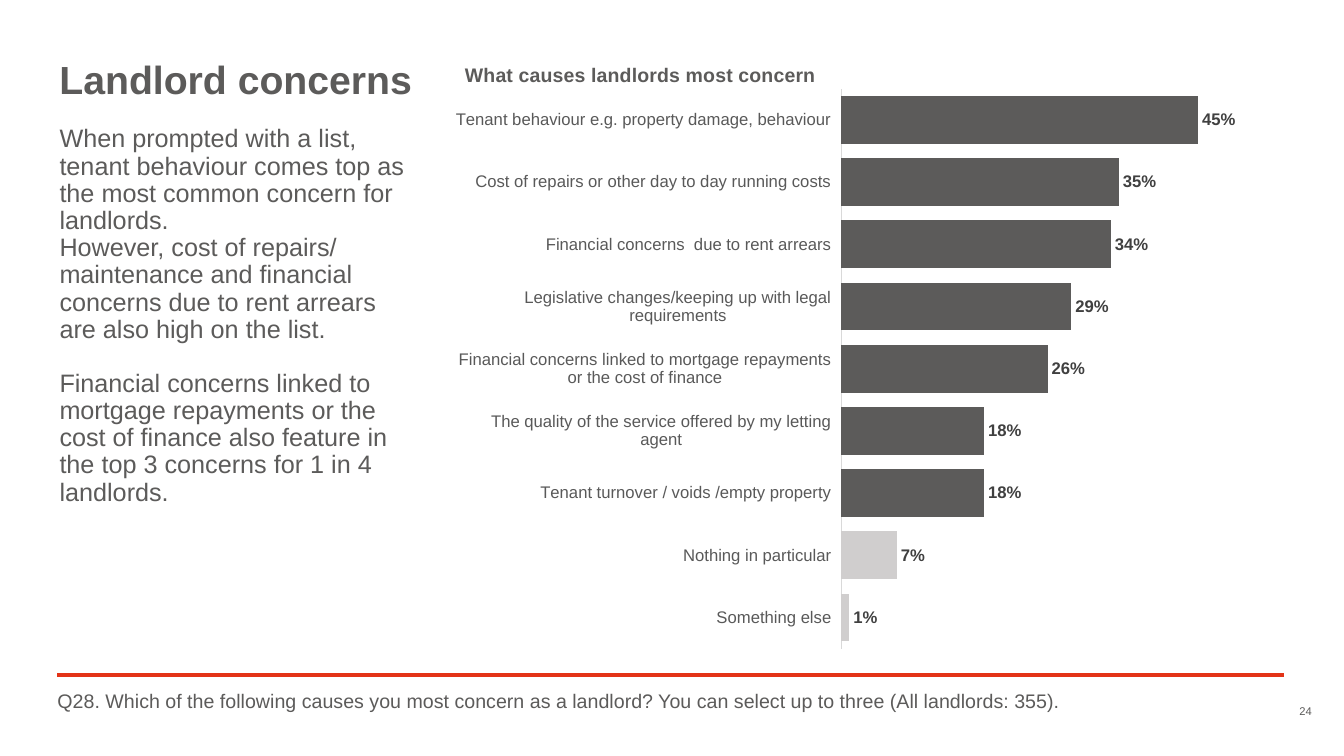
from lxml import etree
from pptx import Presentation
from pptx.chart.data import CategoryChartData
from pptx.dml.color import RGBColor
from pptx.enum.chart import XL_CHART_TYPE as CT, XL_LABEL_POSITION as LP
from pptx.enum.chart import XL_TICK_LABEL_POSITION as TLP, XL_TICK_MARK as TM
from pptx.enum.shapes import MSO_CONNECTOR
from pptx.enum.text import MSO_ANCHOR, PP_ALIGN
from pptx.oxml.ns import qn
from pptx.util import Pt

PX = 9144
GREY, PALE, RED = "5C5B5A", "D0CECE", "E33317"
CONCERNS = [
    ("Tenant behaviour e.g. property damage, behaviour", 0.45),
    ("Cost of repairs or other day to day running costs", 0.35),
    ("Financial concerns  due to rent arrears", 0.34),
    ("Legislative changes/keeping up with legal requirements", 0.29),
    ("Financial concerns linked to mortgage repayments or the cost of finance", 0.26),
    ("The quality of the service offered by my letting agent", 0.18),
    ("Tenant turnover / voids /empty property", 0.18),
    ("Nothing in particular", 0.07),
    ("Something else", 0.01),
]
OTHER_ANSWERS = (7, 8)
FINDINGS = [
    "When prompted with a list, tenant behaviour comes top as the most common concern for landlords.",
    "However, cost of repairs/ maintenance and financial concerns due to rent arrears are also high on the list.",
    "Financial concerns linked to mortgage repayments or the cost of finance also feature in the top 3 concerns for 1 in 4 landlords.",
]


def rgb(value):
    return RGBColor.from_string(value)


def set_layout(parent, index, **settings):
    for old in parent.findall(qn("c:layout")):
        parent.remove(old)
    layout = etree.Element(qn("c:layout"))
    manual = etree.SubElement(layout, qn("c:manualLayout"))
    for tag, value in settings.items():
        etree.SubElement(manual, qn(f"c:{tag}")).set("val", str(value))
    parent.insert(index, layout)


class Deck:
    font = "Arial"

    def __init__(self, width, height):
        self.prs = Presentation()
        self.prs.slide_width, self.prs.slide_height = width * PX, height * PX
        self.s = self.prs.slides.add_slide(self.prs.slide_layouts[6])

    def style(self, font, size, color=GREY, bold=False):
        font.name, font.size, font.bold = self.font, Pt(size), bold
        font.color.rgb = rgb(color)

    def text(self, box, paragraphs, size, bold=False, align=PP_ALIGN.LEFT,
             anchor=MSO_ANCHOR.TOP, spacing=0.9, last_gap=0):
        tf = self.s.shapes.add_textbox(*(n * PX for n in box)).text_frame
        tf.margin_left = tf.margin_right = tf.margin_top = tf.margin_bottom = 0
        tf.word_wrap, tf.vertical_anchor = True, anchor
        for i, words in enumerate(paragraphs):
            p = tf.add_paragraph() if i else tf.paragraphs[0]
            p.text, p.alignment, p.line_spacing = words, align, spacing
            self.style(p.font, size, bold=bold)
        p.space_before = Pt(last_gap)

    def line(self, x1, y1, x2, y2, color, width):
        sp = self.s.shapes.add_connector(
            MSO_CONNECTOR.STRAIGHT, *(n * PX for n in (x1, y1, x2, y2)))
        sp.line.color.rgb, sp.line.width = rgb(color), Pt(width)
        etree.SubElement(sp._element.spPr, qn("a:effectLst"))

    def bar_chart(self, box, title, rows, pale_rows):
        data = CategoryChartData(number_format="0%")
        data.categories = [name for name, _ in rows]
        data.add_series("Series 1", [value for _, value in rows])
        chart = self.s.shapes.add_chart(
            CT.BAR_CLUSTERED, *(n * PX for n in box), data).chart
        chart.has_legend = False
        self.style(chart.font, 10, "000000")

        chart.has_title = True
        p = chart.chart_title.text_frame.paragraphs[0]
        p.text = title
        self.style(p.font, 14, bold=True)
        chart.chart_title.include_in_layout = False
        set_layout(chart.chart_title._element, 1,
                   xMode="edge", yMode="edge", x=0, y=0.02)
        set_layout(chart._chartSpace.chart.plotArea, 0, layoutTarget="inner",
                   xMode="edge", yMode="edge", x=0.467, y=0.07, w=0.487, h=0.921)

        names = chart.category_axis
        names.reverse_order = True
        names.major_tick_mark = names.minor_tick_mark = TM.NONE
        names.tick_label_position = TLP.LOW
        names.format.line.color.rgb = rgb("D9D9D9")
        names.format.line.width = Pt(0.75)
        self.style(names.tick_labels.font, 12, "595959")
        values = chart.value_axis
        values.minimum_scale, values.maximum_scale = 0, 0.5
        values.has_major_gridlines = values.visible = False

        plot = chart.plots[0]
        plot.gap_width, plot.vary_by_categories = 30, False
        series = plot.series[0]
        series.format.fill.solid()
        series.format.fill.fore_color.rgb = rgb(GREY)
        for i in pale_rows:
            fill = series.points[i].format.fill
            fill.solid()
            fill.fore_color.rgb = rgb(PALE)
        labels = series.data_labels
        labels.show_value, labels.position = True, LP.OUTSIDE_END
        labels.number_format, labels.number_format_is_linked = "0%", False
        self.style(labels.font, 12, "404040", True)


def main():
    deck = Deck(1333, 750)
    deck.text((1262, 699, 39, 13), ["24"], 8, align=PP_ALIGN.RIGHT,
              anchor=MSO_ANCHOR.BOTTOM, spacing=1.0)
    deck.line(57, 670, 1273, 670, RED, 3)
    deck.text((59, 60, 1214, 42), ["Landlord concerns"], 28, bold=True)
    deck.text((59, 125, 345, 382), FINDINGS, 18, last_gap=19)
    deck.bar_chart((452, 46, 813, 603), "What causes landlords most concern",
                   CONCERNS, OTHER_ANSWERS)
    deck.text((57, 686, 1216, 32), [
        "Q28. Which of the following causes you most concern as a landlord? "
        "You can select up to three (All landlords: 355)."], 14)
    deck.prs.save("out.pptx")


if __name__ == "__main__":
    main()
